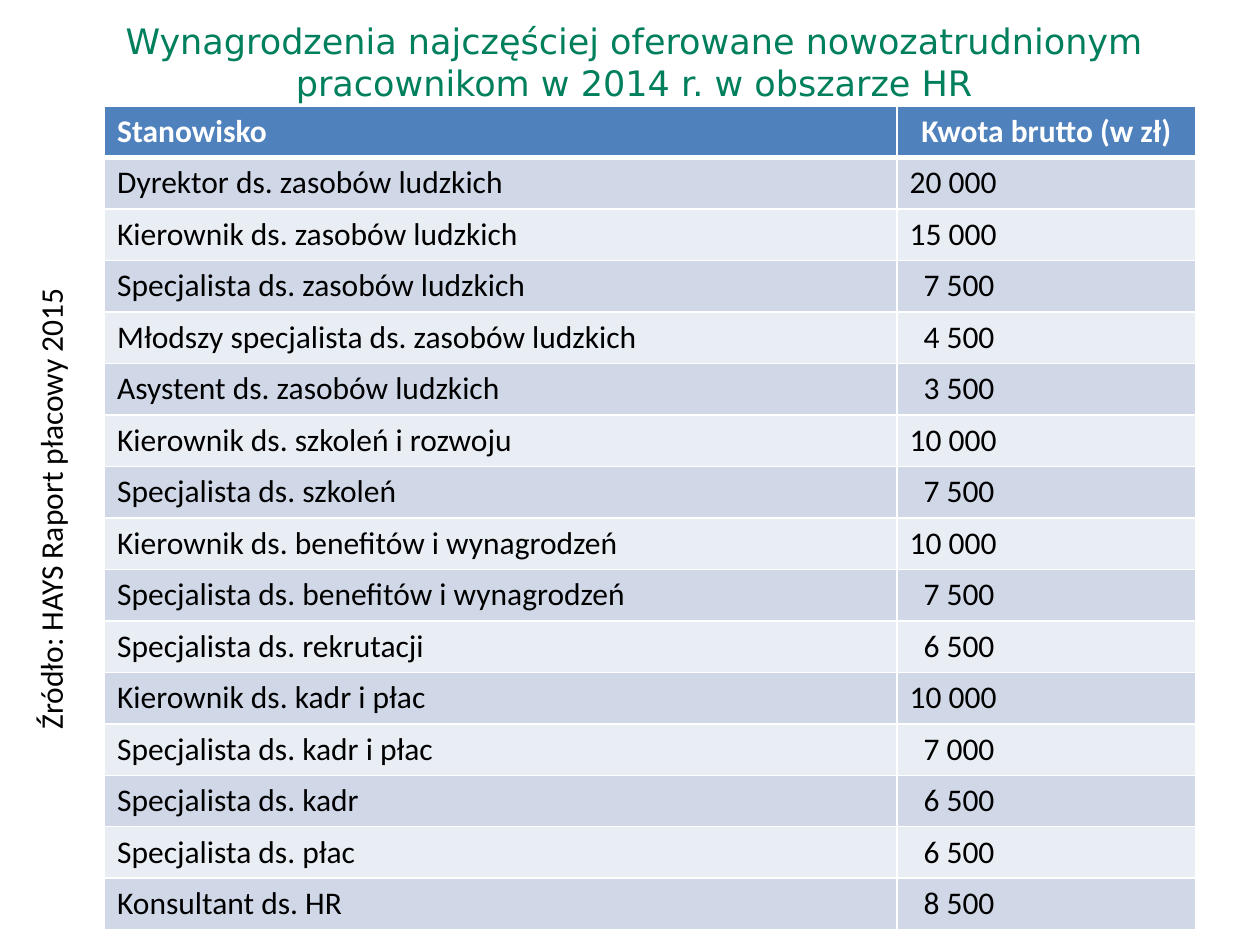
from lxml.etree import SubElement
from pptx import Presentation
from pptx.dml.color import RGBColor
from pptx.enum.text import MSO_ANCHOR as Anchor, MSO_AUTO_SIZE as AutoSize, PP_ALIGN as Align
from pptx.oxml.ns import qn
from pptx.util import Inches, Pt

COLORS = {
    "title": "007F5D",
    "header": "4F81BD",
    "odd_row": "D0D8E8",
    "even_row": "E9EDF4",
    "light": "FFFFFF",
    "text": "000000",
}
BODY_FONT = "Calibri"
TITLE_FONT = "DejaVu Sans"

HEADINGS = ("Stanowisko", "Kwota brutto (w zł)")
SALARIES = [
    ("Dyrektor ds. zasobów ludzkich", "20 000"),
    ("Kierownik ds. zasobów ludzkich", "15 000"),
    ("Specjalista ds. zasobów ludzkich", "7 500"),
    ("Młodszy specjalista ds. zasobów ludzkich", "4 500"),
    ("Asystent ds. zasobów ludzkich", "3 500"),
    ("Kierownik ds. szkoleń i rozwoju", "10 000"),
    ("Specjalista ds. szkoleń", "7 500"),
    ("Kierownik ds. benefitów i wynagrodzeń", "10 000"),
    ("Specjalista ds. benefitów i wynagrodzeń", "7 500"),
    ("Specjalista ds. rekrutacji", "6 500"),
    ("Kierownik ds. kadr i płac", "10 000"),
    ("Specjalista ds. kadr i płac", "7 000"),
    ("Specjalista ds. kadr", "6 500"),
    ("Specjalista ds. płac", "6 500"),
    ("Konsultant ds. HR", "8 500"),
]


def rgb(name):
    return RGBColor.from_string(COLORS[name])


class SlideBuilder:
    def __init__(self, slide):
        self.slide = slide

    def add_text(self, frame, text, size=18, font=BODY_FONT, color="text", bold=False, align=Align.LEFT):
        paragraph = frame.paragraphs[0]
        paragraph.alignment = align
        run = paragraph.add_run()
        run.text = text
        run.font.size = Pt(size)
        run.font.name = font
        run.font.bold = bold
        run.font.color.rgb = rgb(color)

    def title(self, text, left, top, width, height):
        title = self.slide.shapes.title
        title.left, title.top = Inches(left), Inches(top)
        title.width, title.height = Inches(width), Inches(height)
        frame = title.text_frame
        frame.auto_size = AutoSize.NONE
        frame.vertical_anchor = Anchor.MIDDLE
        self.add_text(frame, text, 20, TITLE_FONT, "title", align=Align.CENTER)

    def vertical_note(self, text, left, top, width, height):
        """Add a text box that reads from bottom to top."""
        note = self.slide.shapes.add_textbox(Inches(left), Inches(top), Inches(width), Inches(height))
        frame = note.text_frame
        frame.word_wrap = False
        frame.auto_size = AutoSize.SHAPE_TO_FIT_TEXT
        frame._txBody.bodyPr.set("vert", "vert270")
        self.add_text(frame, text)

    def borders(self, cell, bottom):
        properties = cell._tc.get_or_add_tcPr()
        for side, width in (("L", 1), ("R", 1), ("T", 1), ("B", bottom)):
            line = SubElement(properties, qn(f"a:ln{side}"), w=str(Pt(width)))
            fill = SubElement(line, qn("a:solidFill"))
            SubElement(fill, qn("a:srgbClr"), val=COLORS["light"])

    def salary_table(self, left, top, column_widths, height):
        rows = [HEADINGS, *SALARIES]
        table = self.slide.shapes.add_table(
            len(rows), len(column_widths), Inches(left), Inches(top),
            Inches(sum(column_widths)), Inches(height)).table
        for column, width in zip(table.columns, column_widths):
            column.width = Inches(width)
        longest = max(len(amount) for _, amount in SALARIES)
        for r, values in enumerate(rows):
            is_header = r == 0
            fill = "header" if is_header else "odd_row" if r % 2 else "even_row"
            for c, value in enumerate(values):
                cell = table.cell(r, c)
                self.borders(cell, bottom=3 if is_header else 1)
                cell.fill.solid()
                cell.fill.fore_color.rgb = rgb(fill)
                if c == 1 and len(value) < longest:
                    cell.margin_left = Inches(0.21)
                self.add_text(cell.text_frame, value, bold=is_header,
                              color="light" if is_header else "text",
                              align=Align.CENTER if is_header and c == 1 else Align.LEFT)


def main():
    deck = Presentation()
    deck.slide_width, deck.slide_height = Inches(10), Inches(7.5)
    title_only = deck.slide_layouts[5]
    builder = SlideBuilder(deck.slides.add_slide(title_only))
    builder.salary_table(0.83, 0.84, (6.29, 2.37), 6.54)
    builder.title("Wynagrodzenia najczęściej oferowane nowozatrudnionym "
                  "pracownikom w 2014 r. w obszarze HR", 0.27, 0.13, 9.53, 0.71)
    builder.vertical_note("Źródło: HAYS Raport płacowy 2015", 0.2, 2.25, 0.5, 3.64)
    deck.save("out.pptx")


if __name__ == "__main__":
    main()
